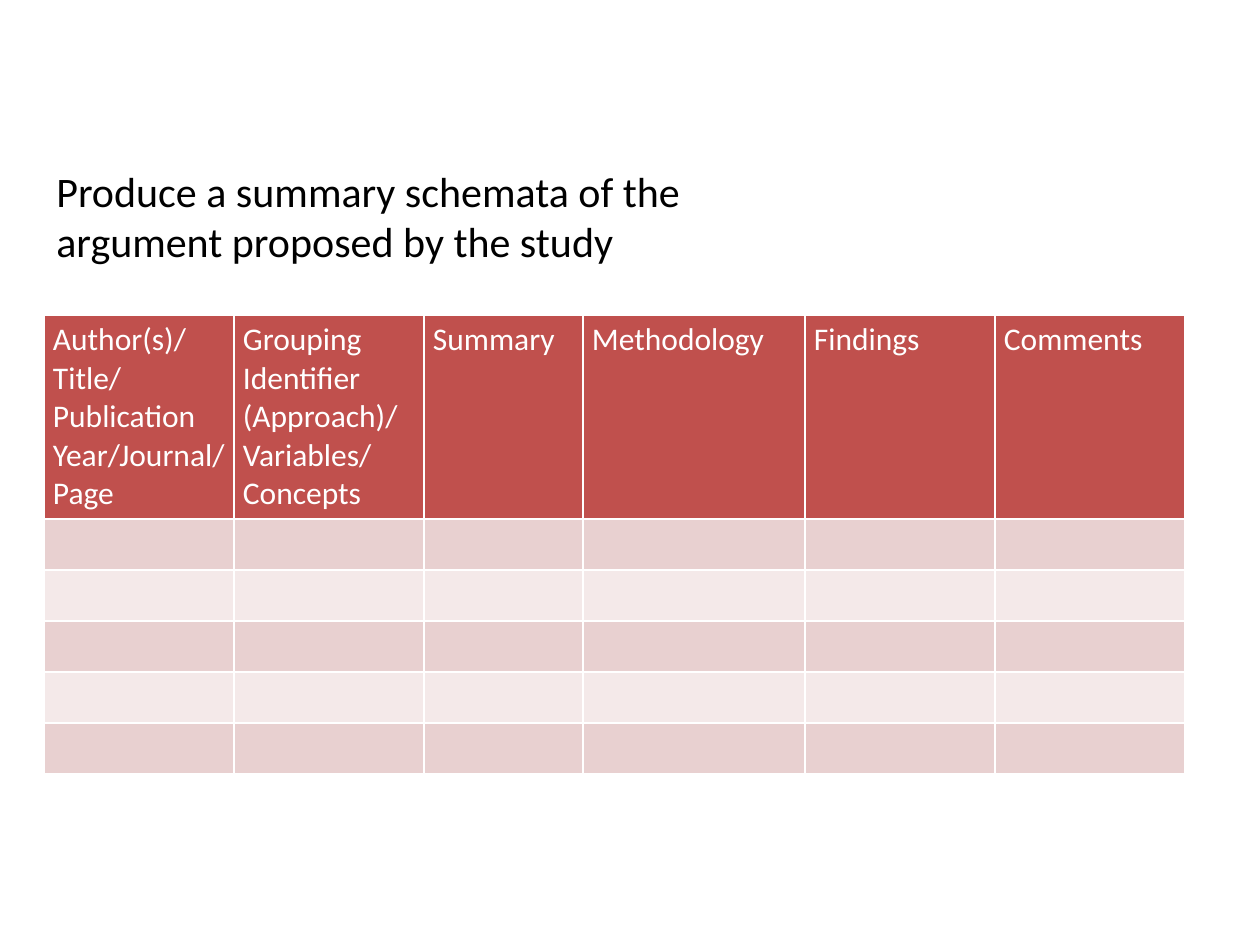
from pptx import Presentation
from pptx.dml.color import RGBColor
from pptx.util import Emu, Pt

SCALE = 914400 / 126


def px(n):
    return Emu(round(n * SCALE))


def color(code):
    return RGBColor.from_string(code)


def assign(target, values):
    for name, value in values.items():
        setattr(target, name, value)


class Deck:
    """Holds the style and the current slide."""

    font = "Calibri"
    head = "C0504D"
    bands = ("E8D0D0", "F4E9E9")
    pad = {"margin_left": px(9), "margin_right": px(9),
           "margin_top": px(6), "margin_bottom": px(6)}

    def __init__(self, width, height):
        self.deck = Presentation()
        assign(self.deck, {"slide_width": px(width), "slide_height": px(height)})
        self.slide = self.deck.slides.add_slide(self.deck.slide_layouts[6])

    def label(self, frame, text, size, ink):
        frame.text = text
        for para in frame.paragraphs:
            assign(para.font, {"name": self.font, "size": Pt(size), "bold": False})
            para.font.color.rgb = color(ink)

    def text(self, box, text, size, ink):
        frame = self.slide.shapes.add_textbox(*map(px, box)).text_frame
        frame.word_wrap = True
        self.label(frame, text, size, ink)

    def paint(self, cell, code):
        assign(cell, self.pad)
        cell.fill.solid()
        cell.fill.fore_color.rgb = color(code)

    def table(self, left, top, widths, heights, titles):
        """Add a table with a header row and empty banded rows."""
        box = map(px, (left, top, sum(widths), sum(heights)))
        grid = self.slide.shapes.add_table(len(heights), len(widths), *box).table
        for col, width in zip(grid.columns, widths):
            col.width = px(width)
        for i, (row, height) in enumerate(zip(grid.rows, heights)):
            row.height = px(height)
            for cell in row.cells:
                self.paint(cell, self.bands[(i - 1) % 2] if i else self.head)
        for cell, title in zip(grid.rows[0].cells, titles):
            self.label(cell.text_frame, title, 18, "FFFFFF")


def main():
    page = Deck(1260, 945)
    titles = ["Author(s)/Title/Publication Year/Journal/Page",
              "Grouping Identifier\n(Approach)/Variables/Concepts",
              "Summary", "Methodology", "Findings", "Comments"]
    page.table(44, 315, [190, 190, 159, 222, 190, 190], [204] + [51] * 5, titles)
    page.text((44, 159, 804, 204),
              "Produce a summary schemata of the argument proposed by the study",
              24, "000000")
    page.deck.save("out.pptx")


if __name__ == "__main__":
    main()
